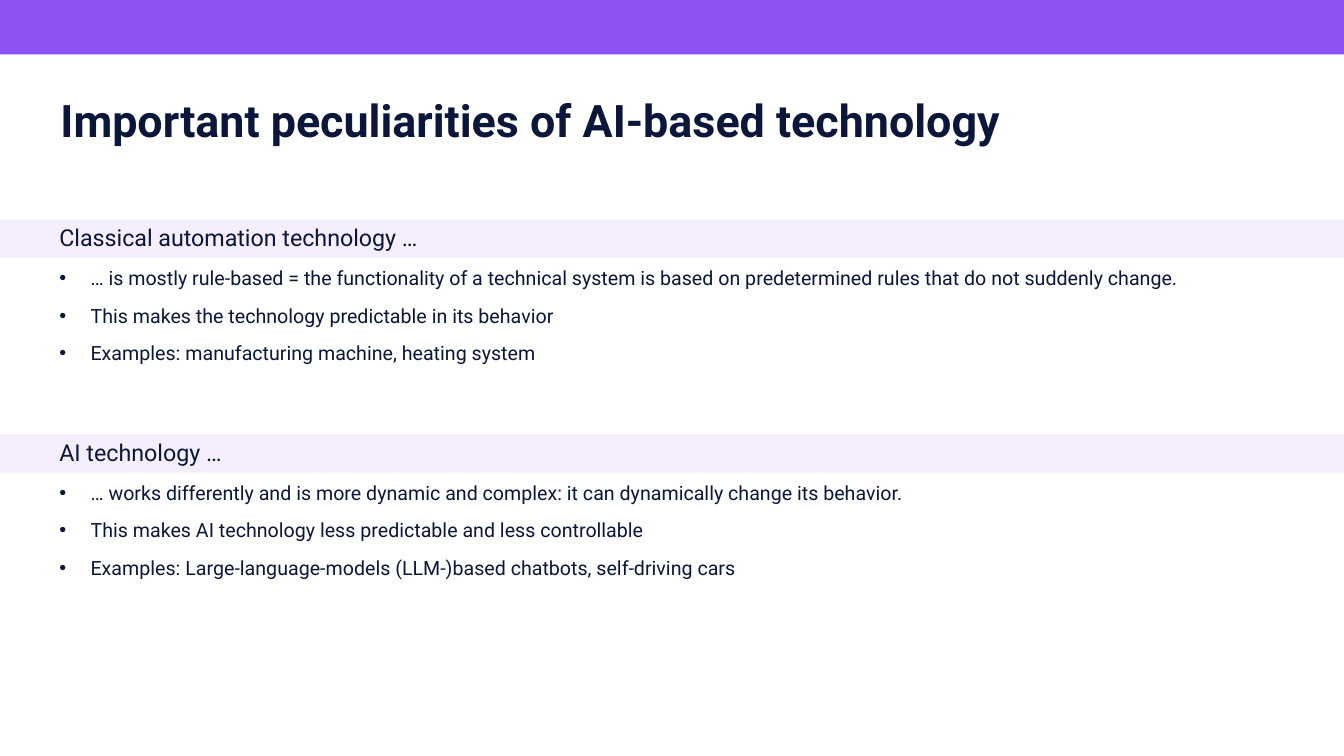
import pptx
import pptx.util
import pptx.dml.color
import pptx.enum.shapes
import pptx.enum.text
import pptx.oxml.ns
from lxml import etree

Inches, Pt = pptx.util.Inches, pptx.util.Pt
FONT = "Roboto"
COLORS = {"banner": "8F52F5", "band": "F4EEFE", "text": "0B163B"}

TITLE = "Important peculiarities of AI-based technology"
SECTIONS = [
    ("Classical automation technology …", [
        "… is mostly rule-based = the functionality of a technical system is based on "
        "predetermined rules that do not suddenly change.",
        "This makes the technology predictable in its behavior",
        "Examples: manufacturing machine, heating system",
    ]),
    ("AI technology …", [
        "… works differently and is more dynamic and complex: it can dynamically "
        "change its behavior.",
        "This makes AI technology less predictable and less controllable",
        "Examples: Large-language-models (LLM-)based chatbots, self-driving cars",
    ]),
]

WIDTH, HEIGHT = 13.33, 7.5
TEXT_LEFT = 0.49
FIRST_BAND, SECTION_STEP, BAND_HEIGHT = 2.18, 2.13, 0.38
BULLET_INDENT = 0.31


def color(name):
    return pptx.dml.color.RGBColor.from_string(COLORS[name])


def set_font(para, size, bold=False):
    font = para.font
    font.name, font.size, font.bold = FONT, Pt(size), bold
    font.color.rgb = color("text")


def add_band(page, top, height, fill):
    band = page.shapes.add_shape(
        pptx.enum.shapes.MSO_SHAPE.RECTANGLE,
        0, Inches(top), Inches(WIDTH), Inches(height))
    band.shadow.inherit = False
    band.fill.solid()
    band.fill.fore_color.rgb = color(fill)
    band.line.fill.background()


def add_text(page, top, width, height, lines, size, bulleted=False):
    box = page.shapes.add_textbox(
        Inches(TEXT_LEFT), Inches(top), Inches(width), Inches(height))
    frame = box.text_frame
    frame.word_wrap = True
    frame.text = "\n".join(lines)
    for index, para in enumerate(frame.paragraphs):
        if index:
            para.space_before = Pt(10)
        if bulleted:
            add_bullet(para)
        set_font(para, size)
    return box


def add_bullet(para):
    props = para._p.get_or_add_pPr()
    indent = Inches(BULLET_INDENT)
    props.set("marL", str(indent))
    props.set("indent", str(-indent))
    qn = pptx.oxml.ns.qn
    etree.SubElement(props, qn("a:buFont")).set("typeface", "Arial")
    etree.SubElement(props, qn("a:buChar")).set("char", "•")


def main():
    deck = pptx.Presentation()
    deck.slide_width, deck.slide_height = Inches(WIDTH), Inches(HEIGHT)
    page = deck.slides.add_slide(deck.slide_layouts[5])

    # Banner and title
    add_band(page, -0.02, 0.56, "banner")
    title = page.shapes.title
    title.left, title.top = Inches(0.5), Inches(0.87)
    title.width, title.height = Inches(12), Inches(0.91)
    title.text_frame.text = TITLE
    title.text_frame.vertical_anchor = pptx.enum.text.MSO_ANCHOR.TOP
    heading = title.text_frame.paragraphs[0]
    heading.alignment = pptx.enum.text.PP_ALIGN.LEFT
    set_font(heading, 32, bold=True)

    # Sections: tinted band, heading, bullets
    for index, (name, points) in enumerate(SECTIONS):
        top = FIRST_BAND + index * SECTION_STEP
        add_band(page, top, BAND_HEIGHT, "band")
        label = add_text(page, top - 0.02, 12.6, 0.43, [name], 16.6)
        label.text_frame.vertical_anchor = pptx.enum.text.MSO_ANCHOR.MIDDLE
        label.text_frame.paragraphs[0].line_spacing = 0.9
        add_text(page, top + 0.41, 12.08, 1.69, points, 14, bulleted=True)

    deck.save("out.pptx")


if __name__ == "__main__":
    main()
